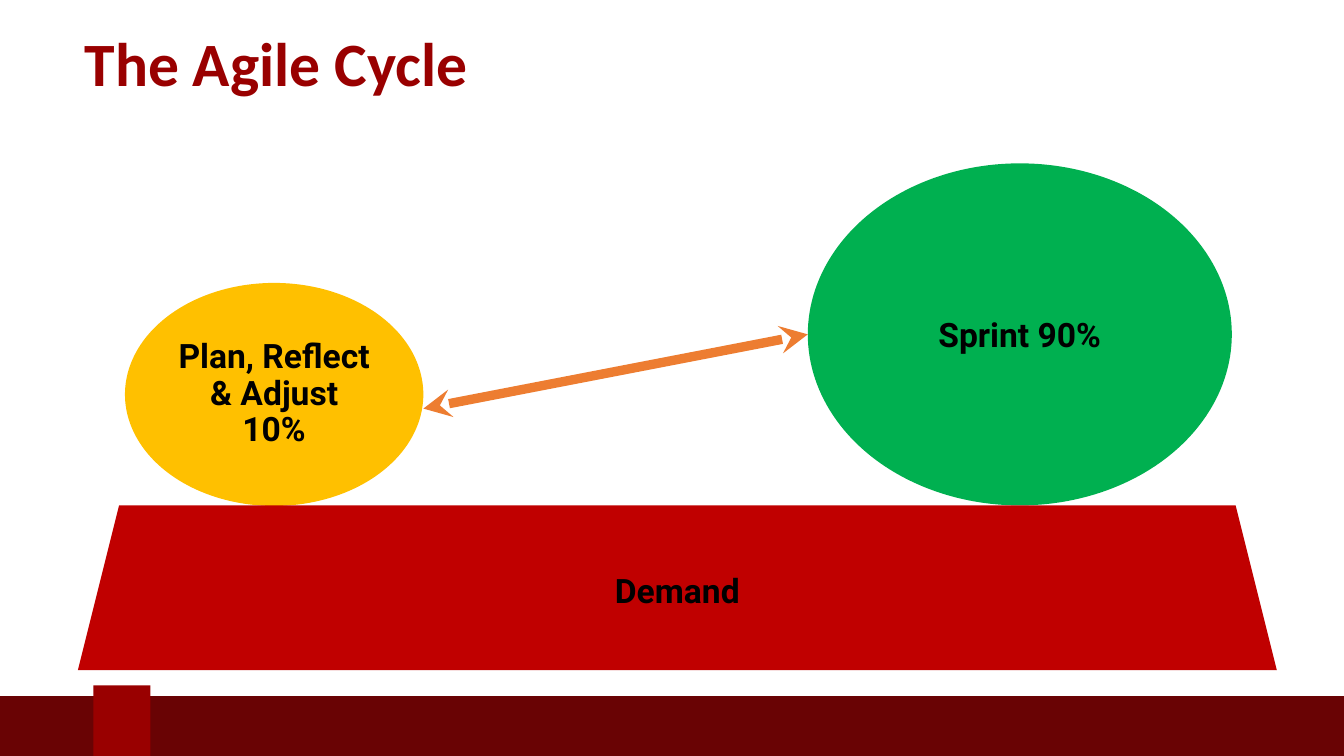
from dataclasses import dataclass
from typing import Optional

from lxml import etree
from pptx import Presentation
from pptx.dml.color import RGBColor
from pptx.enum.shapes import MSO_CONNECTOR, MSO_SHAPE
from pptx.enum.text import MSO_ANCHOR, PP_ALIGN
from pptx.oxml.ns import qn
from pptx.util import Pt

RECTANGLE = MSO_SHAPE.RECTANGLE
OVAL = MSO_SHAPE.OVAL
TRAPEZOID = MSO_SHAPE.TRAPEZOID
STRAIGHT = MSO_CONNECTOR.STRAIGHT
MIDDLE = MSO_ANCHOR.MIDDLE
LEFT, CENTER = PP_ALIGN.LEFT, PP_ALIGN.CENTER

COLORS = {
    "band": "690304",
    "dark red": "990000",
    "yellow": "FFC000",
    "green": "00B050",
    "red": "C00000",
    "orange": "ED7D31",
    "black": "000000",
}
TITLE_FONT = {"name": "Calibri", "size": Pt(66), "bold": True}
LABEL_FONT = {"name": "Roboto", "size": Pt(36), "bold": True}


@dataclass
class Block:
    kind: MSO_SHAPE
    left: float
    top: float
    width: float
    height: float
    color: str
    label: str = ""
    margin: float = 10.8
    line_spacing: Optional[float] = None


FOOTER = [
    Block(RECTANGLE, -5, 746, 1454, 72, "band"),
    Block(RECTANGLE, 100, 734.4, 61.2, 83.5, "dark red"),
]
PLAN = Block(OVAL, 133.9, 303.1, 319.7, 239, "yellow",
             "Plan, Reflect & Adjust 10%", 8.5, 0.9)
SPRINT = Block(OVAL, 865.5, 175, 454.3, 366.5, "green", "Sprint 90%")
DEMAND = Block(TRAPEZOID, 83.5, 541.5, 1284.5, 176.4, "red", "Demand")


def rgb(color: str) -> RGBColor:
    return RGBColor.from_string(COLORS[color])


def write_text(shape, text: str, font: dict, color: str, alignment: PP_ALIGN,
               margin: float, line_spacing: Optional[float]) -> None:
    frame = shape.text_frame
    frame_format = {"word_wrap": True, "vertical_anchor": MIDDLE,
                    "margin_left": Pt(margin), "margin_right": Pt(margin),
                    "margin_top": Pt(5), "margin_bottom": Pt(5)}
    for name, value in frame_format.items():
        setattr(frame, name, value)
    paragraph = frame.paragraphs[0]
    paragraph.alignment = alignment
    paragraph.line_spacing = line_spacing
    run = paragraph.add_run()
    run.text = text
    for name, value in font.items():
        setattr(run.font, name, value)
    run.font.color.rgb = rgb(color)


def add_title(slide, text: str) -> None:
    box = slide.shapes.add_textbox(Pt(83.5), Pt(16.6), Pt(1260.7), Pt(110))
    write_text(box, text, TITLE_FONT, "dark red", LEFT, 7.2, 0.9)


def add_block(slide, block: Block) -> None:
    shape = slide.shapes.add_shape(block.kind, Pt(block.left), Pt(block.top),
                                   Pt(block.width), Pt(block.height))
    shape.shadow.inherit = False
    shape.fill.solid()
    shape.fill.fore_color.rgb = rgb(block.color)
    shape.line.fill.background()
    if block.label:
        write_text(shape, block.label, LABEL_FONT, "black", CENTER,
                   block.margin, block.line_spacing)


def add_double_arrow(slide, start: tuple[float, float],
                     end: tuple[float, float]) -> None:
    points = [Pt(value) for value in (*start, *end)]
    arrow = slide.shapes.add_connector(STRAIGHT, *points)
    arrow.line.width = Pt(10)
    arrow.line.color.rgb = rgb("orange")
    line = arrow.line._get_or_add_ln()
    for tag in ("a:headEnd", "a:tailEnd"):
        etree.SubElement(line, qn(tag), type="stealth")
    etree.SubElement(arrow._element.spPr, qn("a:effectLst"))


def main() -> None:
    presentation = Presentation()
    presentation.slide_width = Pt(1440)
    presentation.slide_height = Pt(810)
    slide = presentation.slides.add_slide(presentation.slide_layouts[6])
    for block in FOOTER:
        add_block(slide, block)
    add_title(slide, "The Agile Cycle")
    add_block(slide, PLAN)
    add_double_arrow(slide, (PLAN.left + PLAN.width, 437.8),
                     (SPRINT.left, SPRINT.top + SPRINT.height / 2))
    add_block(slide, SPRINT)
    add_block(slide, DEMAND)
    presentation.save("out.pptx")


if __name__ == "__main__":
    main()
